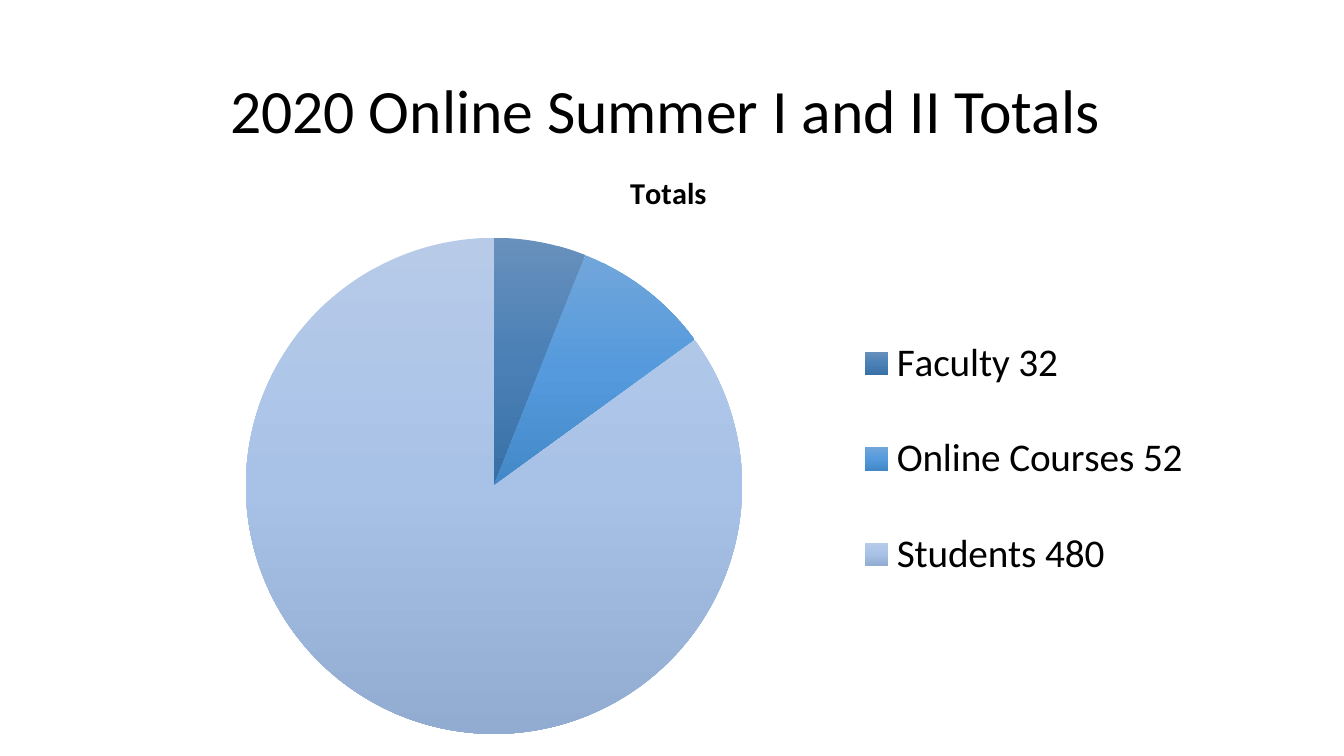
from lxml import etree
from pptx import Presentation
from pptx.chart.data import CategoryChartData as ChartData
from pptx.dml.color import RGBColor
from pptx.enum.chart import XL_CHART_TYPE as ChartType, XL_LEGEND_POSITION as LegendPosition
from pptx.enum.text import MSO_ANCHOR as Anchor, PP_ALIGN as Align
from pptx.oxml import parse_xml
from pptx.oxml.ns import nsdecls, qn
from pptx.util import Inches, Pt

FONT = "Calibri"
BLACK = RGBColor(0x00, 0x00, 0x00)

# Category, share in percent, gradient from top to bottom
TOTALS = [
    ("Faculty 32", 6,
     [RGBColor(0x68, 0x90, 0xBC), RGBColor(0x4A, 0x80, 0xB6), RGBColor(0x38, 0x70, 0xA6)]),
    ("Online Courses 52", 9,
     [RGBColor(0x71, 0xA6, 0xDB), RGBColor(0x55, 0x9A, 0xDC), RGBColor(0x43, 0x89, 0xC8)]),
    ("Students 480", 85,
     [RGBColor(0xB7, 0xCB, 0xE9), RGBColor(0xA8, 0xC2, 0xE7), RGBColor(0x92, 0xAB, 0xD0)]),
]


def style_font(font, size, bold=False):
    font.name = FONT
    font.size = Pt(size)
    font.bold = bold
    font.color.rgb = BLACK


def add_heading(slide, text):
    box = slide.shapes.add_textbox(Inches(0.92), Inches(0.4), Inches(11.5), Inches(1.45))
    frame = box.text_frame
    frame.word_wrap = True
    frame.vertical_anchor = Anchor.MIDDLE
    frame.text = text
    line = frame.paragraphs[0]
    line.alignment = Align.CENTER
    line.line_spacing = 0.9
    style_font(line.runs[0].font, 44)


def place(part, before, inner=False, **fractions):
    """Give a chart part a fixed place, in fractions of the chart."""
    for old in part.findall(qn("c:layout")):
        part.remove(old)
    layout = parse_xml(f"<c:layout {nsdecls('c')}><c:manualLayout/></c:layout>")
    manual = layout[0]
    if inner:
        etree.SubElement(manual, qn("c:layoutTarget")).set("val", "inner")
    for mode in ("xMode", "yMode"):
        etree.SubElement(manual, qn(f"c:{mode}")).set("val", "edge")
    for name, value in fractions.items():
        etree.SubElement(manual, qn(f"c:{name}")).set("val", str(value))
    part.find(qn(before)).addprevious(layout)


def fill_slice(point, colors):
    """Shade a slice from top to bottom through evenly spaced colours."""
    point.format.line.fill.background()
    point.format.fill.gradient()
    point.format.fill.gradient_angle = 270
    stops = point._element.xpath(f"c:dPt[c:idx/@val='{point._idx}']//a:gsLst")[0]
    for stop in list(stops):
        stops.remove(stop)
    for i, color in enumerate(colors):
        position = 100000 * i // (len(colors) - 1)
        stops.append(parse_xml(
            f'<a:gs {nsdecls("a")} pos="{position}"><a:srgbClr val="{color}"/></a:gs>'))


def add_totals_pie(slide):
    totals = ChartData()
    totals.categories = [name for name, _, _ in TOTALS]
    totals.add_series("Totals", [share for _, share, _ in TOTALS])
    chart = slide.shapes.add_chart(
        ChartType.PIE, Inches(0.45), Inches(1.47), Inches(12.36), Inches(5.93), totals).chart
    style_font(chart.font, 18)

    # Slices
    pie = chart.plots[0]
    pie.vary_by_categories = True
    for i, (_, _, colors) in enumerate(TOTALS):
        fill_slice(pie.series[0].points[i], colors)
    plot_area = chart._chartSpace.chart.plotArea
    place(plot_area, "c:pieChart", inner=True, x=0.16, y=0.15, w=0.4, h=0.83)

    # Chart title, centred above the pie and legend
    chart.has_title = True
    title = chart.chart_title
    title.include_in_layout = False
    title.text_frame.text = "Totals"
    style_font(title.text_frame.paragraphs[0].runs[0].font, 21.6, bold=True)

    # Legend
    chart.has_legend = True
    legend = chart.legend
    legend.position = LegendPosition.RIGHT
    legend.include_in_layout = False
    style_font(legend.font, 28)
    place(legend._element, "c:overlay", x=0.62, y=0.24, w=0.33, h=0.56)


def main():
    deck = Presentation()
    deck.slide_width = Inches(13.33)
    deck.slide_height = Inches(7.5)
    slide = deck.slides.add_slide(deck.slide_layouts[6])
    add_heading(slide, "2020 Online Summer I and II Totals ")
    add_totals_pie(slide)
    deck.save("out.pptx")


if __name__ == "__main__":
    main()
